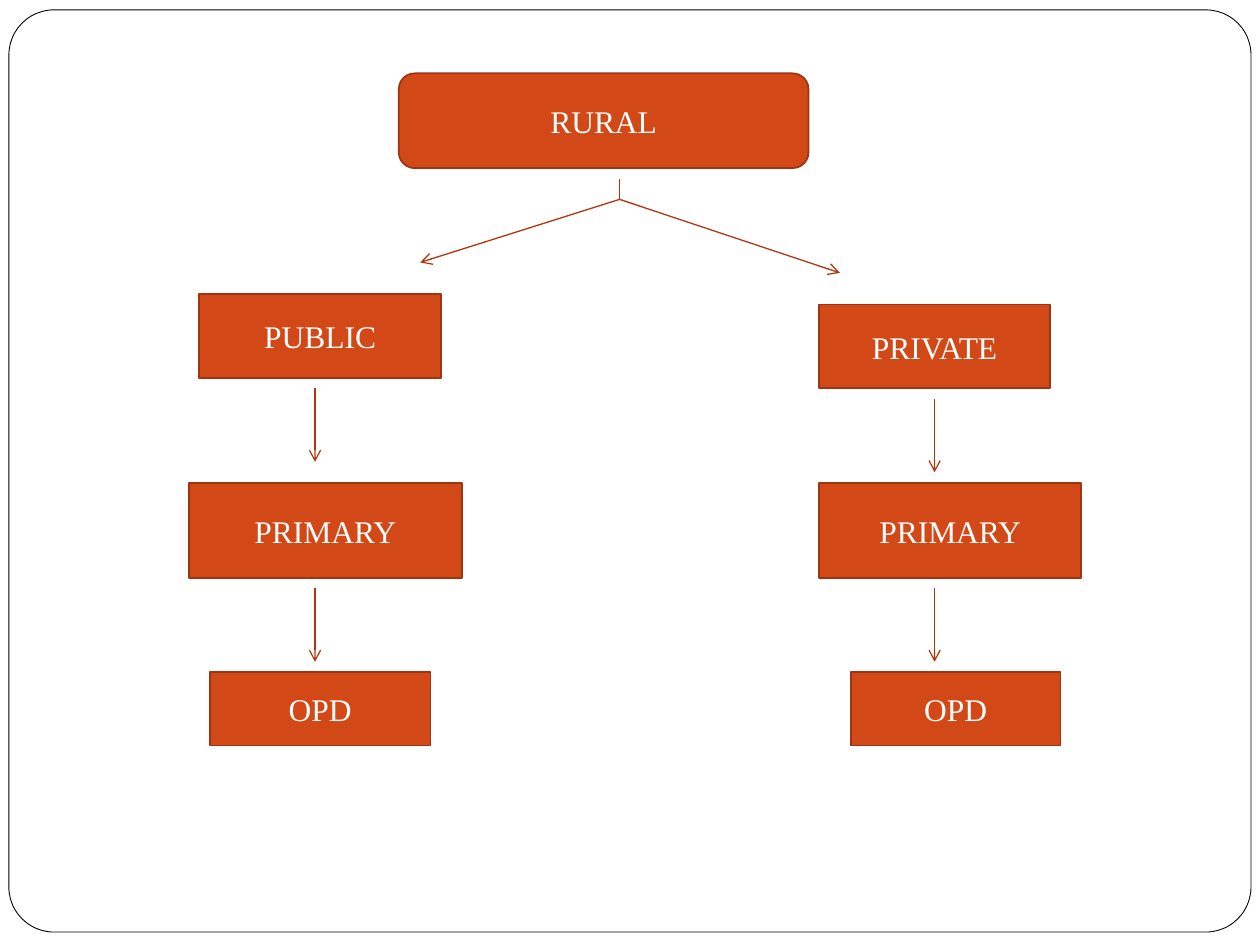
from dataclasses import dataclass
from typing import Optional

from lxml.etree import SubElement
from pptx import Presentation
from pptx.dml.color import RGBColor
from pptx.enum.shapes import MSO_CONNECTOR as Conn, MSO_SHAPE as Shp
from pptx.enum.text import MSO_ANCHOR as Anchor, PP_ALIGN as Align
from pptx.oxml.ns import qn
from pptx.util import Cm, Pt


@dataclass(frozen=True)
class Theme:
    white: str = "FFFFFF"
    frame_line: str = "000000"
    box_fill: str = "D34817"
    box_line: str = "9C3511"
    arrow: str = "B1360B"
    font: str = "Times New Roman"
    text_pt: float = 18
    frame_pt: float = 0.5
    box_pt: float = 1
    arrow_pt: float = 0.75


@dataclass(frozen=True)
class Box:
    """A box in the flow chart, in centimetres."""
    left: float
    top: float
    width: float
    height: float
    text: str = ""
    shape: Shp = Shp.RECTANGLE

    @property
    def bottom(self) -> float:
        return self.top + self.height


@dataclass(frozen=True)
class Branch:
    """A column of boxes linked by vertical arrows."""
    axis: float
    boxes: tuple[Box, ...]
    fork_tip: tuple[float, float]


THEME = Theme()
GAP = 0.21       # space between a box and the line below it
ARROW_LEN = 1.48
FORK_X, FORK_Y = 12.49, 4.02

FRAME = Box(0.18, 0.2, 25.04, 18.59, shape=Shp.ROUNDED_RECTANGLE)
ROOT = Box(8.04, 1.48, 8.26, 1.91, "RURAL", Shp.ROUNDED_RECTANGLE)
BRANCHES = (
    Branch(6.35, (
        Box(4.02, 5.93, 4.87, 1.69, "PUBLIC"),
        Box(3.81, 9.74, 5.5, 1.91, "PRIMARY"),
        Box(4.23, 13.55, 4.45, 1.48, "OPD"),
    ), (8.47, 5.29)),
    Branch(18.84, (
        Box(16.51, 6.14, 4.66, 1.69, "PRIVATE"),
        Box(16.51, 9.74, 5.29, 1.91, "PRIMARY"),
        Box(17.15, 13.55, 4.23, 1.48, "OPD"),
    ), (16.93, 5.5)),
)


def rgb(value: str) -> RGBColor:
    return RGBColor.from_string(value)


def draw_box(s, box: Box, fill: str, line: str, line_pt: float,
             adj: Optional[float] = None) -> None:
    sp = s.shapes.add_shape(box.shape, Cm(box.left), Cm(box.top),
                            Cm(box.width), Cm(box.height))
    sp.shadow.inherit = False
    sp.fill.solid()
    sp.fill.fore_color.rgb = rgb(fill)
    sp.line.color.rgb = rgb(line)
    sp.line.width = Pt(line_pt)
    if adj is not None:
        sp.adjustments[0] = adj
    if box.text:
        tf = sp.text_frame
        tf.word_wrap = True
        tf.vertical_anchor = Anchor.MIDDLE
        p = tf.paragraphs[0]
        p.alignment = Align.CENTER
        r = p.add_run()
        r.text = box.text
        r.font.name = THEME.font
        r.font.size = Pt(THEME.text_pt)
        r.font.color.rgb = rgb(THEME.white)


def draw_line(s, x1: float, y1: float, x2: float, y2: float,
              arrow: bool = True) -> None:
    cx = s.shapes.add_connector(Conn.STRAIGHT, Cm(x1), Cm(y1), Cm(x2), Cm(y2))
    cx.line.color.rgb = rgb(THEME.arrow)
    cx.line.width = Pt(THEME.arrow_pt)
    if arrow:
        SubElement(cx.line._get_or_add_ln(), qn("a:tailEnd"), type="arrow")
    SubElement(cx._element.spPr, qn("a:effectLst"))


def draw_branch(s, branch: Branch) -> None:
    for box in branch.boxes:
        draw_box(s, box, THEME.box_fill, THEME.box_line, THEME.box_pt)
    draw_line(s, FORK_X, FORK_Y, *branch.fork_tip)
    for box in branch.boxes[:-1]:
        start = box.bottom + GAP
        draw_line(s, branch.axis, start, branch.axis, start + ARROW_LEN)


def main() -> None:
    prs = Presentation()
    prs.slide_width, prs.slide_height = Cm(25.4), Cm(19.05)
    s = prs.slides.add_slide(prs.slide_layouts[6])  # blank: there is no title

    # Page frame
    draw_box(s, FRAME, THEME.white, THEME.frame_line, THEME.frame_pt, 0.049)

    # Root box and the stem of the fork
    draw_box(s, ROOT, THEME.box_fill, THEME.box_line, THEME.box_pt)
    draw_line(s, FORK_X, ROOT.bottom + GAP, FORK_X, FORK_Y, arrow=False)

    # Public and private branches
    for branch in BRANCHES:
        draw_branch(s, branch)

    prs.save("out.pptx")


if __name__ == "__main__":
    main()
